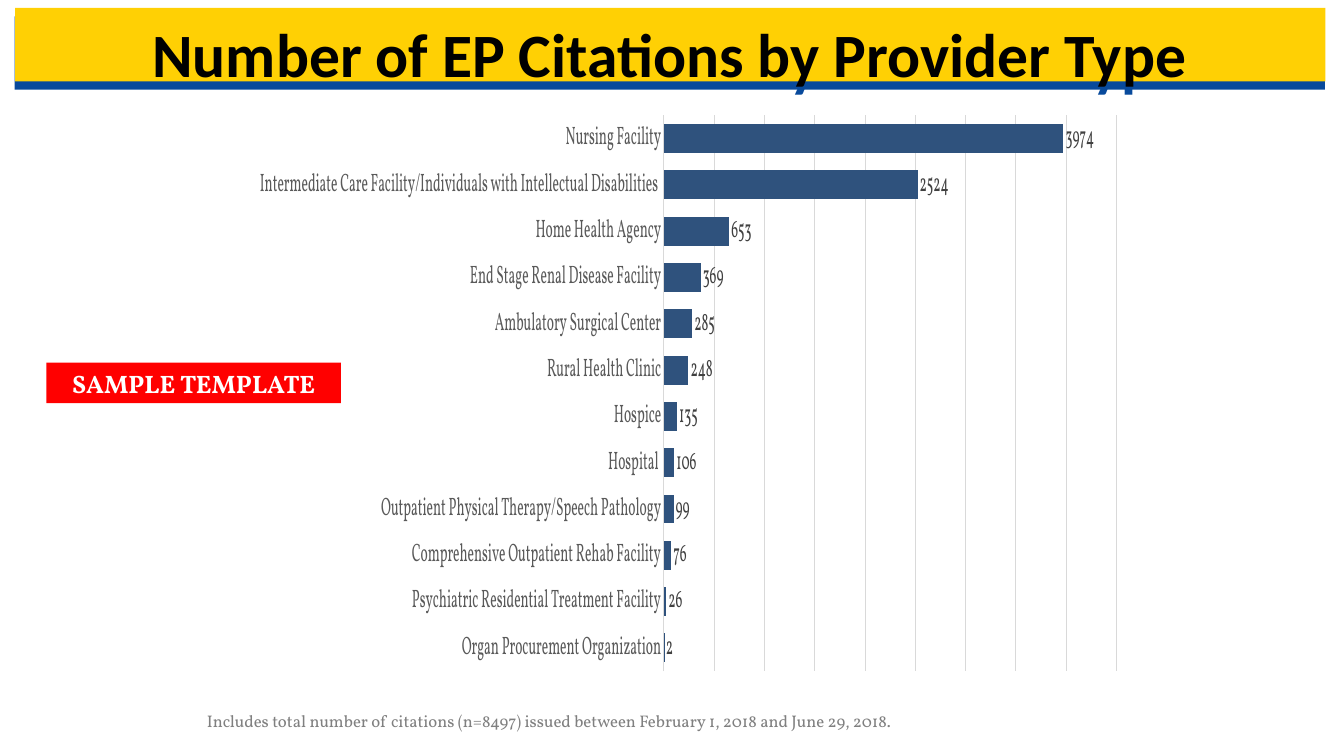
from lxml.etree import SubElement
from pptx import Presentation
from pptx.chart.data import CategoryChartData
from pptx.dml.color import RGBColor
from pptx.enum.chart import XL_CHART_TYPE, XL_LABEL_POSITION, XL_TICK_MARK
from pptx.enum.shapes import MSO_SHAPE
from pptx.enum.text import MSO_ANCHOR, MSO_AUTO_SIZE, PP_ALIGN
from pptx.oxml import parse_xml
from pptx.oxml.ns import nsdecls, qn
from pptx.util import Cm, Pt

TITLE = "Number of EP Citations by Provider Type"
BADGE = "SAMPLE TEMPLATE"
NOTE = " Includes total number of citations (n=8497) issued between February 1, 2018 and June 29, 2018."
CITATIONS = [
    ("Organ Procurement Organization", 2),
    ("Psychiatric Residential Treatment Facility", 26),
    ("Comprehensive Outpatient Rehab Facility", 76),
    ("Outpatient Physical Therapy/Speech Pathology", 99),
    ("Hospital ", 106),
    ("Hospice", 135),
    ("Rural Health Clinic", 248),
    ("Ambulatory Surgical Center", 285),
    ("End Stage Renal Disease Facility", 369),
    ("Home Health Agency", 653),
    ("Intermediate Care Facility/Individuals with Intellectual Disabilities ", 2524),
    ("Nursing Facility", 3974),
]

YELLOW = RGBColor(0xFF, 0xD0, 0x04)
BLUE = RGBColor(0x08, 0x4A, 0x9C)
BAR = RGBColor(0x2F, 0x52, 0x7D)
RED = RGBColor(0xFF, 0, 0)
BLACK = RGBColor(0, 0, 0)
WHITE = RGBColor(0xFF, 0xFF, 0xFF)
VALUE_GREY = RGBColor(0x40, 0x40, 0x40)
LABEL_GREY = RGBColor(0x59, 0x59, 0x59)
NOTE_GREY = RGBColor(0x80, 0x80, 0x80)
GRID = RGBColor(0xD9, 0xD9, 0xD9)

TITLE_FONT = {"name": "Calibri", "size": Pt(44), "bold": True, "color": BLACK}
BADGE_FONT = {"name": "Vollkorn", "size": Pt(18), "bold": True, "color": WHITE}
NOTE_FONT = {"name": "Vollkorn", "size": Pt(12), "color": NOTE_GREY}
CHART_FONT = {"name": "Vollkorn", "size": Pt(18), "color": BLACK}

TITLE_BOX = (Cm(0.38), Cm(0.2), Cm(33.02), Cm(1.85))
CHART_BOX = (Cm(6.55), Cm(2.62), Cm(22), Cm(14.6))
BADGE_BOX = (Cm(1.17), Cm(9.14), Cm(7.42), Cm(1.02))
NOTE_BOX = (Cm(4.88), Cm(17.78), Cm(18.82), Cm(0.76))
PLOT = {"layoutTarget": "inner", "xMode": "edge", "yMode": "edge",
        "x": 0, "y": 0.02, "w": 0.965, "h": 0.959}


def set_font(font, fmt):
    """Apply a dict of format values to a font."""
    for key, value in fmt.items():
        if key == "color":
            font.color.rgb = value
        else:
            setattr(font, key, value)


def set_text(sp, text, fmt, align, anchor):
    """Write one formatted paragraph into a shape."""
    tf = sp.text_frame
    for key, value in {"word_wrap": True, "auto_size": MSO_AUTO_SIZE.NONE,
                       "vertical_anchor": anchor}.items():
        setattr(tf, key, value)
    p = tf.paragraphs[0]
    p.alignment = align
    r = p.add_run()
    r.text = text
    set_font(r.font, fmt)


def set_line(line, color):
    """Give a chart line its colour and width."""
    line.color.rgb = color
    line.width = Pt(0.75)


def add_title(s):
    """Format the title as a yellow band with a blue shadow."""
    sp = s.shapes.title
    sp.left, sp.top, sp.width, sp.height = TITLE_BOX
    sp.fill.solid()
    sp.fill.fore_color.rgb = YELLOW
    sp._element.spPr.append(parse_xml(
        f'<a:effectLst {nsdecls("a")}><a:outerShdw dist="{Pt(6)}" dir="{94 * 60000}" '
        f'algn="ctr" rotWithShape="0"><a:srgbClr val="{BLUE}"/></a:outerShdw></a:effectLst>'))
    set_text(sp, TITLE, TITLE_FONT, PP_ALIGN.CENTER, MSO_ANCHOR.TOP)
    sp.text_frame.margin_top = Cm(0.19)
    sp.text_frame.margin_bottom = 0


def add_citations(s):
    """Add the bar chart of citations by provider type."""
    data = CategoryChartData()
    data.categories = [name for name, _ in CITATIONS]
    data.add_series("Series 1", [count for _, count in CITATIONS])
    chart = s.shapes.add_chart(XL_CHART_TYPE.BAR_CLUSTERED, *CHART_BOX, data).chart
    chart.has_legend = False
    chart.has_title = False
    set_font(chart.font, CHART_FONT)

    plot = chart.plots[0]
    plot.gap_width = 60
    plot.vary_by_categories = False
    bars = plot.series[0]
    bars.format.fill.solid()
    bars.format.fill.fore_color.rgb = BAR
    labels = bars.data_labels
    labels.show_value = True
    labels.position = XL_LABEL_POSITION.OUTSIDE_END
    set_font(labels.font, {**CHART_FONT, "color": VALUE_GREY})

    cat = chart.category_axis
    cat.major_tick_mark = XL_TICK_MARK.NONE
    set_line(cat.format.line, GRID)
    set_font(cat.tick_labels.font, {**CHART_FONT, "color": LABEL_GREY})
    val = chart.value_axis
    for key, value in {"visible": False, "has_major_gridlines": True, "minimum_scale": 0,
                       "maximum_scale": 4500, "major_unit": 500}.items():
        setattr(val, key, value)
    set_line(val.major_gridlines.format.line, GRID)

    area = chart._chartSpace.chart.plotArea
    for old in area.findall(qn("c:layout")):
        area.remove(old)
    layout = parse_xml(f'<c:layout {nsdecls("c")}/>')
    manual = SubElement(layout, qn("c:manualLayout"))
    for key, value in PLOT.items():
        SubElement(manual, qn(f"c:{key}")).set("val", str(value))
    area.insert(0, layout)


def add_badge(s):
    """Add the red badge."""
    sp = s.shapes.add_shape(MSO_SHAPE.RECTANGLE, *BADGE_BOX)
    sp.shadow.inherit = False
    sp.fill.solid()
    sp.fill.fore_color.rgb = RED
    sp.line.fill.background()
    set_text(sp, BADGE, BADGE_FONT, PP_ALIGN.CENTER, MSO_ANCHOR.MIDDLE)


def main():
    """Build the slide and save it."""
    prs = Presentation()
    prs.slide_width, prs.slide_height = Cm(33.87), Cm(19.05)
    s = prs.slides.add_slide(prs.slide_layouts[5])
    add_title(s)
    add_citations(s)
    add_badge(s)
    note = s.shapes.add_textbox(*NOTE_BOX)
    set_text(note, NOTE, NOTE_FONT, PP_ALIGN.LEFT, MSO_ANCHOR.TOP)
    prs.save("out.pptx")


if __name__ == "__main__":
    main()
